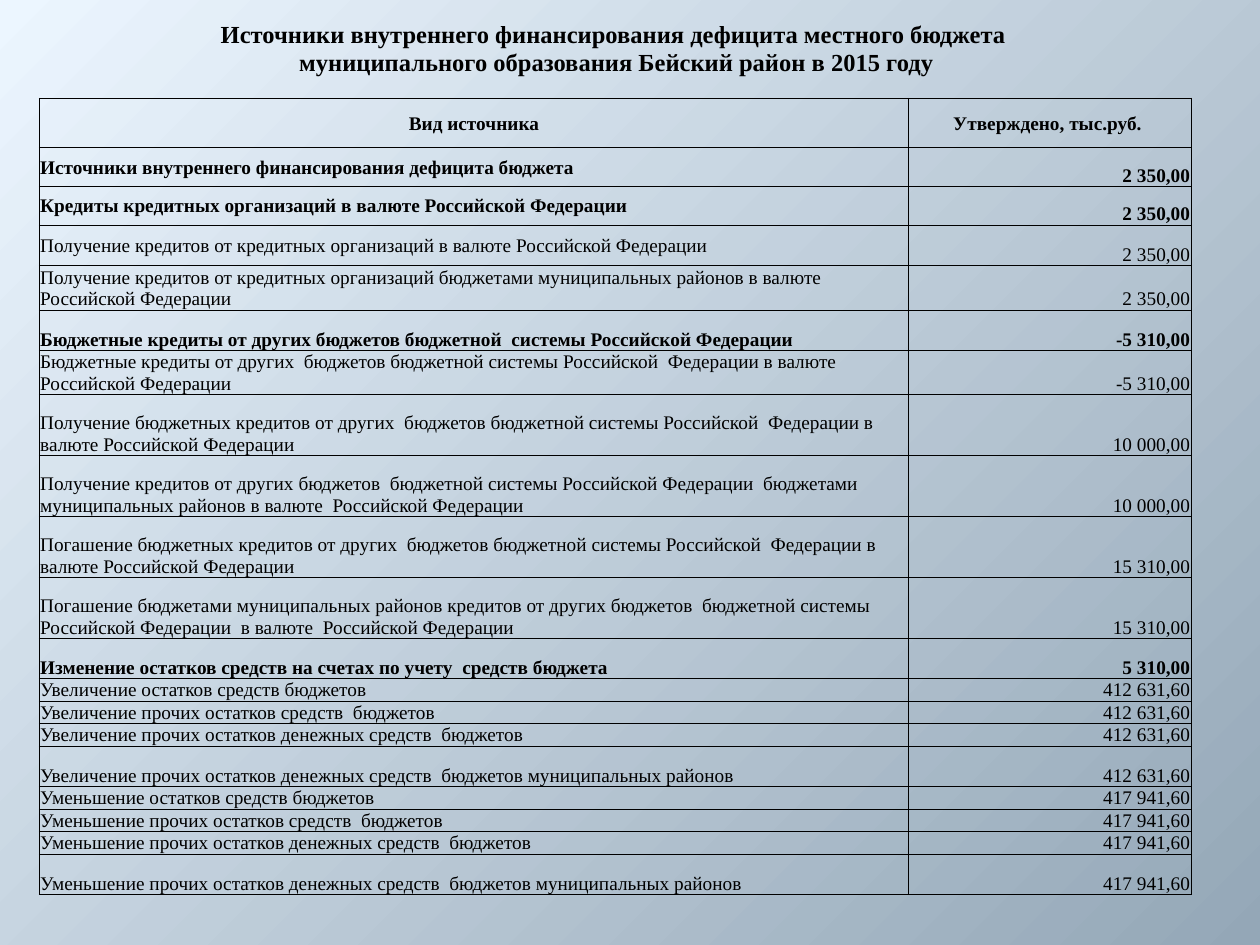
from dataclasses import dataclass

from lxml import etree
from pptx import Presentation
from pptx import util as u
from pptx.dml.color import RGBColor
from pptx.enum import text
from pptx.oxml import ns


@dataclass(frozen=True)
class Theme:
    font: str = "Times New Roman"
    ink: str = "000000"
    light: str = "ECF6FF"
    dark: str = "94A7B7"
    title: float = 14
    body: float = 11
    border: float = 0.5


theme = Theme()
LEFT, CENTER, RIGHT = text.PP_ALIGN.LEFT, text.PP_ALIGN.CENTER, text.PP_ALIGN.RIGHT
MIDDLE, BOTTOM = text.MSO_ANCHOR.MIDDLE, text.MSO_ANCHOR.BOTTOM


def add_grid(s, left, top, widths, heights):
    table = s.shapes.add_table(len(heights), len(widths), u.Cm(left), u.Cm(top),
                               u.Cm(sum(widths)), u.Cm(sum(heights))).table
    table.first_row = table.horz_banding = False
    for col, width in zip(table.columns, widths):
        col.width = u.Cm(width)
    for row, height in zip(table.rows, heights):
        row.height = u.Cm(height)
    return table


def write(cell, words, size=theme.body, bold=False, align=LEFT, anchor=BOTTOM, border=True):
    cell.fill.background()
    cell.margin_left = cell.margin_right = cell.margin_top = u.Cm(0.02)
    cell.margin_bottom = 0
    cell.vertical_anchor = anchor
    pr = cell._tc.get_or_add_tcPr()
    for i, side in enumerate(("lnL", "lnR", "lnT", "lnB")):
        ln = etree.Element(ns.qn(f"a:{side}"), w=str(u.Pt(theme.border)))
        if border:
            fill = etree.SubElement(ln, ns.qn("a:solidFill"))
            etree.SubElement(fill, ns.qn("a:srgbClr"), val=theme.ink)
        else:
            etree.SubElement(ln, ns.qn("a:noFill"))
        pr.insert(i, ln)
    p = cell.text_frame.paragraphs[0]
    p.alignment = align
    r = p.add_run()
    r.text = words
    r.font.name = theme.font
    r.font.size = u.Pt(size)
    r.font.bold = bold
    r.font.color.rgb = RGBColor.from_string(theme.ink)


prs = Presentation()
prs.slide_width, prs.slide_height = u.Cm(25.4), u.Cm(19.05)
s = prs.slides.add_slide(prs.slide_layouts[6])

bg = s.background.fill
bg.gradient()
for stop, color in zip(bg.gradient_stops, (theme.light, theme.dark)):
    stop.color.rgb = RGBColor.from_string(color)
grad = s._element.find(".//" + ns.qn("a:gradFill"))
grad.remove(grad.find(ns.qn("a:lin")))
radial = etree.SubElement(grad, ns.qn("a:path"), path="circle")
etree.SubElement(radial, ns.qn("a:fillToRect"), r="100000", b="100000")

rows = [
    (1.0, True, "Вид источника", "Утверждено, тыс.руб. "),
    (0.78, True, "Источники внутреннего финансирования дефицита бюджета", "2 350,00"),
    (0.78, True, "Кредиты кредитных организаций в валюте Российской Федерации", "2 350,00"),
    (0.82, False, "Получение кредитов от кредитных организаций в валюте Российской Федерации", "2 350,00"),
    (0.89, False, "Получение кредитов от кредитных организаций бюджетами муниципальных районов в валюте Российской Федерации", "2 350,00"),
    (0.81, True, "Бюджетные кредиты от других бюджетов бюджетной  системы Российской Федерации", "-5 310,00"),
    (0.89, False, "Бюджетные кредиты от других  бюджетов бюджетной системы Российской  Федерации в валюте Российской Федерации", "-5 310,00"),
    (1.23, False, "Получение бюджетных кредитов от других  бюджетов бюджетной системы Российской  Федерации в валюте Российской Федерации", "10 000,00"),
    (1.23, False, "Получение кредитов от других бюджетов  бюджетной системы Российской Федерации  бюджетами муниципальных районов в валюте  Российской Федерации", "10 000,00"),
    (1.23, False, "Погашение бюджетных кредитов от других  бюджетов бюджетной системы Российской  Федерации в валюте Российской Федерации", "15 310,00"),
    (1.23, False, "Погашение бюджетами муниципальных районов кредитов от других бюджетов  бюджетной системы Российской Федерации  в валюте  Российской Федерации", "15 310,00"),
    (0.81, True, "Изменение остатков средств на счетах по учету  средств бюджета", "5 310,00"),
]
for change, amount in (("Увеличение", "412 631,60"), ("Уменьшение", "417 941,60")):
    rows += [
        (0.45, False, f"{change} остатков средств бюджетов", amount),
        (0.45, False, f"{change} прочих остатков средств  бюджетов", amount),
        (0.45, False, f"{change} прочих остатков денежных средств  бюджетов", amount),
        (0.82, False, f"{change} прочих остатков денежных средств  бюджетов муниципальных районов", amount),
    ]

sources = add_grid(s, 0.79, 1.98, (17.53, 5.69), [row[0] for row in rows])
for i, (_, bold, *words) in enumerate(rows):
    for j, value in enumerate(words):
        write(sources.cell(i, j), value, bold=bold,
              align=CENTER if i == 0 else (LEFT, RIGHT)[j],
              anchor=MIDDLE if i == 0 or (j == 0 and i < 5) else BOTTOM)

heading = (
    "Источники внутреннего финансирования дефицита местного бюджета ",
    "муниципального образования Бейский район в 2015 году",
)
title = add_grid(s, 3.96, 0.41, (16.94,), [0.48] * len(heading))
for i, line in enumerate(heading):
    write(title.cell(i, 0), line, size=theme.title, bold=True, align=CENTER, border=False)

prs.save("out.pptx")
